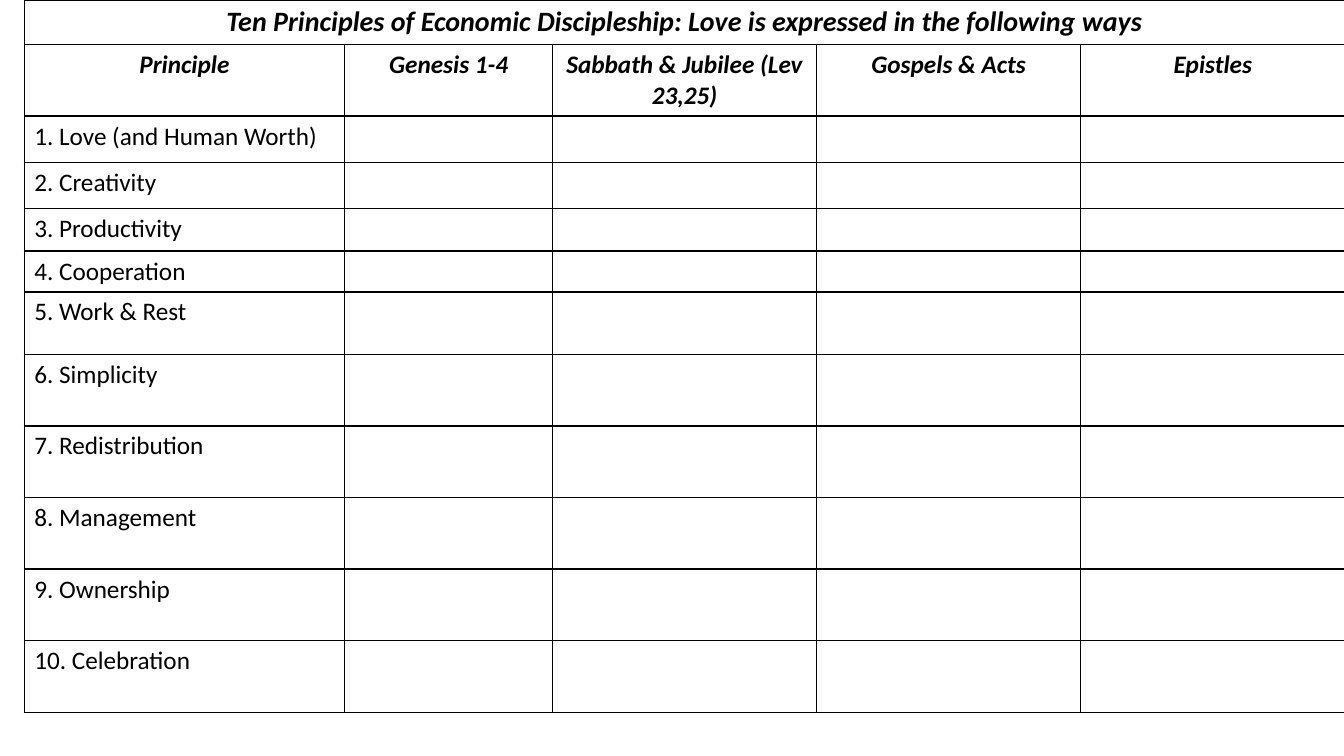
"""Build a slide with a blank worksheet table of ten economic principles."""
import lxml.etree
import pptx
import pptx.dml.color
import pptx.enum.text
import pptx.oxml.ns
import pptx.util

BLACK = pptx.dml.color.RGBColor(0x00, 0x00, 0x00)
CENTER = pptx.enum.text.PP_ALIGN.CENTER
LEFT = pptx.enum.text.PP_ALIGN.LEFT

TITLE = "Ten Principles of Economic Discipleship: Love is expressed in the following ways"
HEADINGS = ["Principle", "Genesis 1-4", "Sabbath & Jubilee (Lev 23,25)", "Gospels & Acts", "Epistles"]
PRINCIPLES = [
    "Love (and Human Worth)", "Creativity", "Productivity", "Cooperation", "Work & Rest",
    "Simplicity", "Redistribution", "Management", "Ownership", "Celebration",
]
COLUMN_WIDTHS = [3.18, 2.06] + [2.62] * 3
ROW_HEIGHTS = [0.44, 0.71, 0.46, 0.46, 0.42, 0.4, 0.62] + [0.71] * 5


def add_borders(cell):
    properties = cell._tc.get_or_add_tcPr()
    for position, side in enumerate(["a:lnL", "a:lnR", "a:lnT", "a:lnB"]):
        line = lxml.etree.Element(pptx.oxml.ns.qn(side), w=str(pptx.util.Pt(1)))
        fill = lxml.etree.SubElement(line, pptx.oxml.ns.qn("a:solidFill"))
        lxml.etree.SubElement(fill, pptx.oxml.ns.qn("a:srgbClr"), val=str(BLACK))
        properties.insert(position, line)


presentation = pptx.Presentation()
presentation.slide_width = pptx.util.Inches(13.33)
presentation.slide_height = pptx.util.Inches(7.5)
slide = presentation.slides.add_slide(presentation.slide_layouts[6])

rows = [[TITLE] + [""] * 4, HEADINGS]
rows += [[f"{number}. {name}"] + [""] * 4 for number, name in enumerate(PRINCIPLES, 1)]

table = slide.shapes.add_table(
    len(ROW_HEIGHTS), len(COLUMN_WIDTHS), pptx.util.Inches(0.24), 0,
    pptx.util.Inches(sum(COLUMN_WIDTHS)), pptx.util.Inches(sum(ROW_HEIGHTS)),
).table
table.first_row = False
table.horz_banding = False
for column, width in zip(table.columns, COLUMN_WIDTHS):
    column.width = pptx.util.Inches(width)
for row, height in zip(table.rows, ROW_HEIGHTS):
    row.height = pptx.util.Inches(height)
table.cell(0, 0).merge(table.cell(0, len(COLUMN_WIDTHS) - 1))

for row_index, texts in enumerate(rows):
    is_heading = row_index < 2
    font_format = {
        "name": "Calibri",
        "size": pptx.util.Pt(20 if row_index == 0 else 18),
        "bold": is_heading,
        "italic": is_heading,
    }
    for column_index, text in enumerate(texts):
        cell = table.cell(row_index, column_index)
        cell.fill.background()
        add_borders(cell)
        paragraph = cell.text_frame.paragraphs[0]
        paragraph.alignment = CENTER if is_heading else LEFT
        if text:
            run = paragraph.add_run()
            run.text = text
            for attribute, value in font_format.items():
                setattr(run.font, attribute, value)
            run.font.color.rgb = BLACK

presentation.save("out.pptx")
